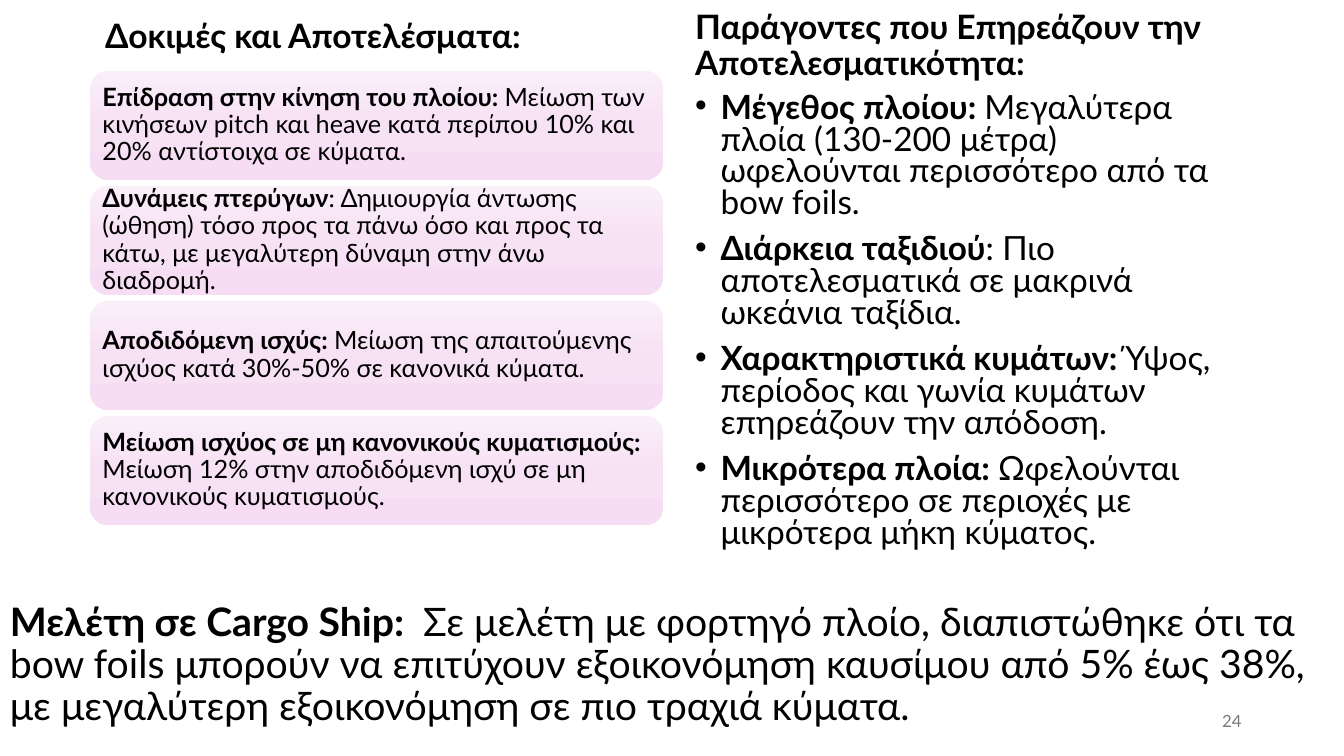
"""Build the slide on bow foil test results and the factors behind them."""
import copy

import pptx
import pptx.dml.color
import pptx.enum.shapes
import pptx.enum.text
import pptx.oxml
import pptx.oxml.ns
import pptx.util

Cm = pptx.util.Cm
Pt = pptx.util.Pt
ANCHOR = pptx.enum.text.MSO_ANCHOR
ALIGN = pptx.enum.text.PP_ALIGN

RESULTS = [
    ("Επίδραση στην κίνηση του πλοίου: ",
     "Μείωση των κινήσεων pitch και heave κατά περίπου 10% και 20% αντίστοιχα σε κύματα."),
    ("Δυνάμεις πτερύγων",
     ": Δημιουργία άντωσης (ώθηση) τόσο προς τα πάνω όσο και προς τα κάτω, "
     "με μεγαλύτερη δύναμη στην άνω διαδρομή."),
    ("Αποδιδόμενη ισχύς: ",
     "Μείωση της απαιτούμενης ισχύος κατά 30%-50% σε κανονικά κύματα."),
    ("Μείωση ισχύος σε μη κανονικούς κυματισμούς: ",
     "Μείωση 12% στην αποδιδόμενη ισχύ σε μη κανονικούς κυματισμούς."),
]
FACTORS = [
    ("Μέγεθος πλοίου: ",
     "Μεγαλύτερα πλοία (130-200 μέτρα) ωφελούνται περισσότερο από τα bow foils."),
    ("Διάρκεια ταξιδιού", ": Πιο αποτελεσματικά σε μακρινά ωκεάνια ταξίδια."),
    ("Χαρακτηριστικά κυμάτων: ", "Ύψος, περίοδος και γωνία κυμάτων επηρεάζουν την απόδοση."),
    ("Μικρότερα πλοία: ", "Ωφελούνται περισσότερο σε περιοχές με μικρότερα μήκη κύματος."),
]
STUDY = ("Μελέτη σε Cargo Ship:  ",
         "Σε μελέτη με φορτηγό πλοίο, διαπιστώθηκε ότι τα bow foils μπορούν να επιτύχουν "
         "εξοικονόμηση καυσίμου από 5% έως 38%, με μεγαλύτερη εξοικονόμηση σε πιο τραχιά κύματα.")


def rgb(value):
    return pptx.dml.color.RGBColor.from_string(value)


def apply(target, values):
    for name, value in values.items():
        setattr(target, name, value)


class SlideBuilder:
    font = "Lato"
    ink = "000000"
    gradient = [(0, "FAEEF9"), (0.5, "F7E1F4"), (1, "F6DDF4")]

    def __init__(self, s):
        self.s = s

    def fill_text(self, sp, paragraphs, size, color=None, frame=None, para=None, bullet=False):
        tf = sp.text_frame
        apply(tf, {"word_wrap": True, **(frame or {})})
        for i, (lead, rest) in enumerate(paragraphs):
            p = tf.paragraphs[0] if i == 0 else tf.add_paragraph()
            apply(p, {"alignment": ALIGN.LEFT, "line_spacing": 0.9, **(para or {})})
            if bullet:
                self.bullet(p)
            for text, bold in ((lead, True), (rest, False)):
                if text:
                    r = p.add_run()
                    r.text = text
                    apply(r.font, {"name": self.font, "size": Pt(size), "bold": bold})
                    r.font.color.rgb = rgb(color or self.ink)

    def bullet(self, p):
        pPr = p._p.get_or_add_pPr()
        pPr.set("marL", str(Cm(0.64)))
        pPr.set("indent", str(-Cm(0.64)))
        for tag, name, value in (("buFont", "typeface", "Arial"), ("buChar", "char", "•")):
            mark = pptx.oxml.parse_xml(f"<a:{tag} {pptx.oxml.ns.nsdecls('a')}/>")
            mark.set(name, value)
            pPr.append(mark)

    def text(self, box, paragraphs, size, **style):
        sp = self.s.shapes.add_textbox(*map(Cm, box))
        self.fill_text(sp, paragraphs, size, **style)

    def card(self, box, paragraph):
        sp = self.s.shapes.add_shape(
            pptx.enum.shapes.MSO_SHAPE.ROUNDED_RECTANGLE, *map(Cm, box))
        sp.shadow.inherit = False
        sp.line.fill.background()
        sp.fill.gradient()
        sp.fill.gradient_angle = 270
        stops = sp._element.spPr.find(".//" + pptx.oxml.ns.qn("a:gsLst"))
        stops.append(copy.deepcopy(stops[-1]))
        for stop, (position, color) in zip(sp.fill.gradient_stops, self.gradient):
            stop.position = position
            stop.color.rgb = rgb(color)
        inset = Cm(0.18)
        frame = {"vertical_anchor": ANCHOR.MIDDLE, "margin_left": inset, "margin_right": inset,
                 "margin_top": inset, "margin_bottom": inset}
        self.fill_text(sp, [paragraph], 18, frame=frame)


def main():
    prs = pptx.Presentation()
    prs.slide_width, prs.slide_height = Cm(33.87), Cm(19.05)
    b = SlideBuilder(prs.slides.add_slide(prs.slide_layouts[6]))
    middle = {"vertical_anchor": ANCHOR.MIDDLE}
    bottom = {"vertical_anchor": ANCHOR.BOTTOM}
    spaced = {"space_before": Pt(10)}

    b.text((0, 14.5, 33.87, 4.55), [STUDY], 28, frame=middle)
    b.text((2.4, -0.76, 14.33, 2.29), [("Δοκιμές και Αποτελέσματα:", "")], 24,
           frame=bottom, para=spaced)
    for i, result in enumerate(RESULTS):
        b.card((2.27, 1.78 + 2.9 * i, 14.45, 2.75), result)
    b.text((17.27, -0.08, 14.4, 2.29),
           [("Παράγοντες που Επηρεάζουν την Αποτελεσματικότητα:", "")], 24,
           frame=bottom, para=spaced)
    b.text((17.27, 2.23, 14.33, 11.94), FACTORS, 23.8,
           para={**spaced, "line_spacing": 0.8}, bullet=True)
    b.text((23.92, 17.66, 7.62, 1.01), [("", "24")], 12, color="797979",
           frame=middle, para={"alignment": ALIGN.RIGHT, "line_spacing": 1.0})
    prs.save("out.pptx")


if __name__ == "__main__":
    main()
